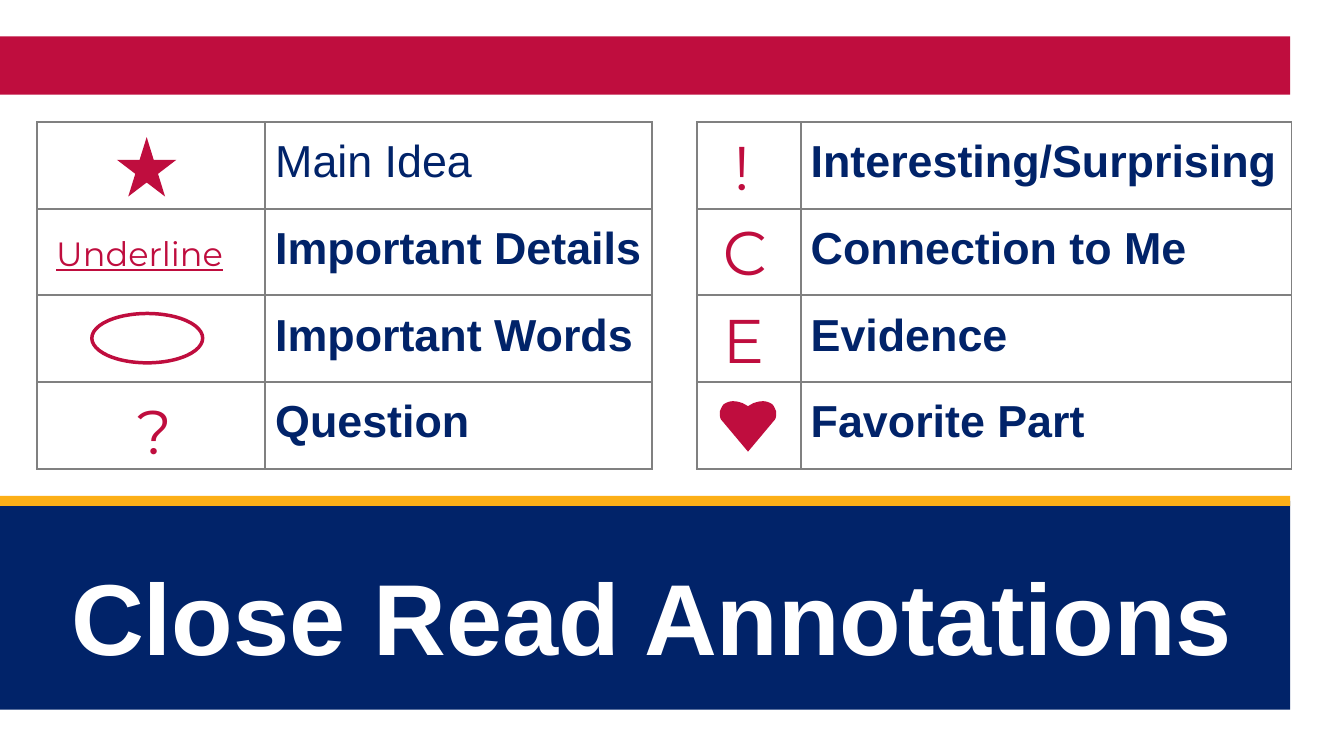
from lxml.etree import SubElement
from pptx import Presentation
from pptx.dml.color import RGBColor
from pptx.enum.shapes import MSO_SHAPE as Preset
from pptx.enum.text import PP_ALIGN as Align
from pptx.oxml.ns import qn
from pptx.util import Inches, Pt

NAVY = RGBColor(0x01, 0x23, 0x69)
GOLD = RGBColor(0xFC, 0xAF, 0x17)
RED = RGBColor(0xBF, 0x0D, 0x3E)
WHITE = RGBColor(0xFF, 0xFF, 0xFF)
GRAY = RGBColor(0x80, 0x80, 0x80)

WIDTH, HEIGHT = Inches(13.33), Inches(7.5)
BAND_WIDTH = 96
TABLE_TOP, ROW_HEIGHT = 16.13, 11.47

# Right half of the heart, in half-widths and heights: start, then Bezier pieces
HEART_START = (0, 0.1)
HEART_CURVES = [
    [(0.04, 0.08), (0.14, 0.06), (0.18, 0.04)],
    [(0.29, 0.02), (0.39, 0), (0.54, 0)],
    [(0.64, 0), (0.75, 0.02), (0.86, 0.06)],
    [(0.93, 0.1), (0.96, 0.16), (1, 0.2)],
    [(1, 0.26), (1, 0.32), (0.96, 0.36)],
]


def across(share):
    """Percent of the slide's width."""
    return round(WIDTH * share / 100)


def down(share):
    """Percent of the slide's height."""
    return round(HEIGHT * share / 100)


def frame(left, top, width, height):
    return across(left), down(top), across(width), down(height)


def paint(shape, fill, line=None):
    shape.shadow.inherit = False
    shape.fill.solid()
    shape.fill.fore_color.rgb = fill
    if line is None:
        shape.line.fill.background()
    else:
        shape.line.color.rgb = line
        shape.line.width = Pt(2.5)


def add_preset(page, preset, area, fill, line=None):
    paint(page.shapes.add_shape(preset, *frame(*area)), fill, line)


def write(text_frame, text, font_name, size, color, bold=False):
    text_frame.word_wrap = True
    para = text_frame.paragraphs[0]
    para.text = text
    font = para.font
    font.name, font.size, font.bold = font_name, Pt(size), bold
    font.color.rgb = color
    return para


def add_text(page, area, *style):
    box = page.shapes.add_textbox(*frame(*area))
    return write(box.text_frame, *style)


def draw_borders(cell):
    properties = cell._tc.get_or_add_tcPr()
    for side in ("lnL", "lnR", "lnT", "lnB"):
        line = SubElement(properties, qn(f"a:{side}"), w=str(Pt(1.5)))
        fill = SubElement(line, qn("a:solidFill"))
        SubElement(fill, qn("a:srgbClr"), val=str(GRAY))
    SubElement(properties, qn("a:noFill"))


def add_key_table(page, left, column_widths, labels, plain=()):
    area = frame(left, TABLE_TOP, sum(column_widths), ROW_HEIGHT * len(labels))
    table = page.shapes.add_table(len(labels), 2, *area).table
    table.first_row = table.horz_banding = False
    for column, width in zip(table.columns, column_widths):
        column.width = across(width)
    for row, label in zip(table.rows, labels):
        row.height = down(ROW_HEIGHT)
        for cell in row.cells:
            draw_borders(cell)
        cell = row.cells[1]
        cell.margin_top, cell.margin_bottom = down(2), 0
        write(cell.text_frame, label, "Arial", 32, NAVY, label not in plain)
    return table


def bezier(start, first, second, end, steps=8):
    for step in range(1, steps + 1):
        t = step / steps
        weights = ((1 - t) ** 3, 3 * t * (1 - t) ** 2, 3 * t * t * (1 - t), t ** 3)
        corners = (start, first, second, end)
        yield tuple(sum(w * c[axis] for w, c in zip(weights, corners)) for axis in (0, 1))


def add_heart(page, area):
    left, top, width, height = frame(*area)
    half = [HEART_START]
    for curve in HEART_CURVES:
        half.extend(bezier(half[-1], *curve))
    outline = half + [(0, 1)] + [(-x, y) for x, y in reversed(half[1:])]
    points = [(left + width * (1 + x) / 2, top + height * y) for x, y in outline]
    builder = page.shapes.build_freeform(*points[0])
    builder.add_line_segments(points[1:], close=True)
    paint(builder.convert_to_shape(), RED)


def main():
    deck = Presentation()
    deck.slide_width, deck.slide_height = WIDTH, HEIGHT
    page = deck.slides.add_slide(deck.slide_layouts[6])

    # Bands and title
    for top, height, color in ((66.27, 27.6, NAVY), (65.6, 1.33, GOLD), (4.8, 7.73, RED)):
        add_preset(page, Preset.RECTANGLE, (0, top, BAND_WIDTH, height), color)
    title = add_text(page, (1, 72.67, 95, 17.47),
                     "Close Read Annotations", "Arial", 72, WHITE, True)
    title.alignment = Align.CENTER

    # Tables of meanings
    key = add_key_table(page, 2.78, (16.95, 28.8),
                        ("Main Idea", "Important Details", "Important Words", "Question"),
                        plain=("Main Idea",))
    add_key_table(page, 51.84, (7.73, 36.53),
                  ("Interesting/Surprising", "Connection to Me", "Evidence", "Favorite Part"))
    sample = key.cell(1, 0)
    sample.margin_left, sample.margin_top, sample.margin_bottom = across(1.4), down(3.33), 0
    write(sample.text_frame, "Underline", "Montserrat", 24, RED).font.underline = True

    # Annotation marks
    add_preset(page, Preset.STAR_5_POINT, (8.7, 18.13, 4.43, 7.87), RED)
    add_preset(page, Preset.OVAL, (6.83, 41.47, 8.25, 6.53), WHITE, RED)
    for mark, left, top in (("?", 9.45, 51.33), ("!", 53.86, 16.4),
                            ("C", 53.04, 27.6), ("E", 53.04, 39.33)):
        add_text(page, (left, top, 6, 11.2), mark, "Montserrat", 44, RED)
    add_heart(page, (53.56, 53.07, 4.2, 6.67))

    deck.save("out.pptx")


if __name__ == "__main__":
    main()
